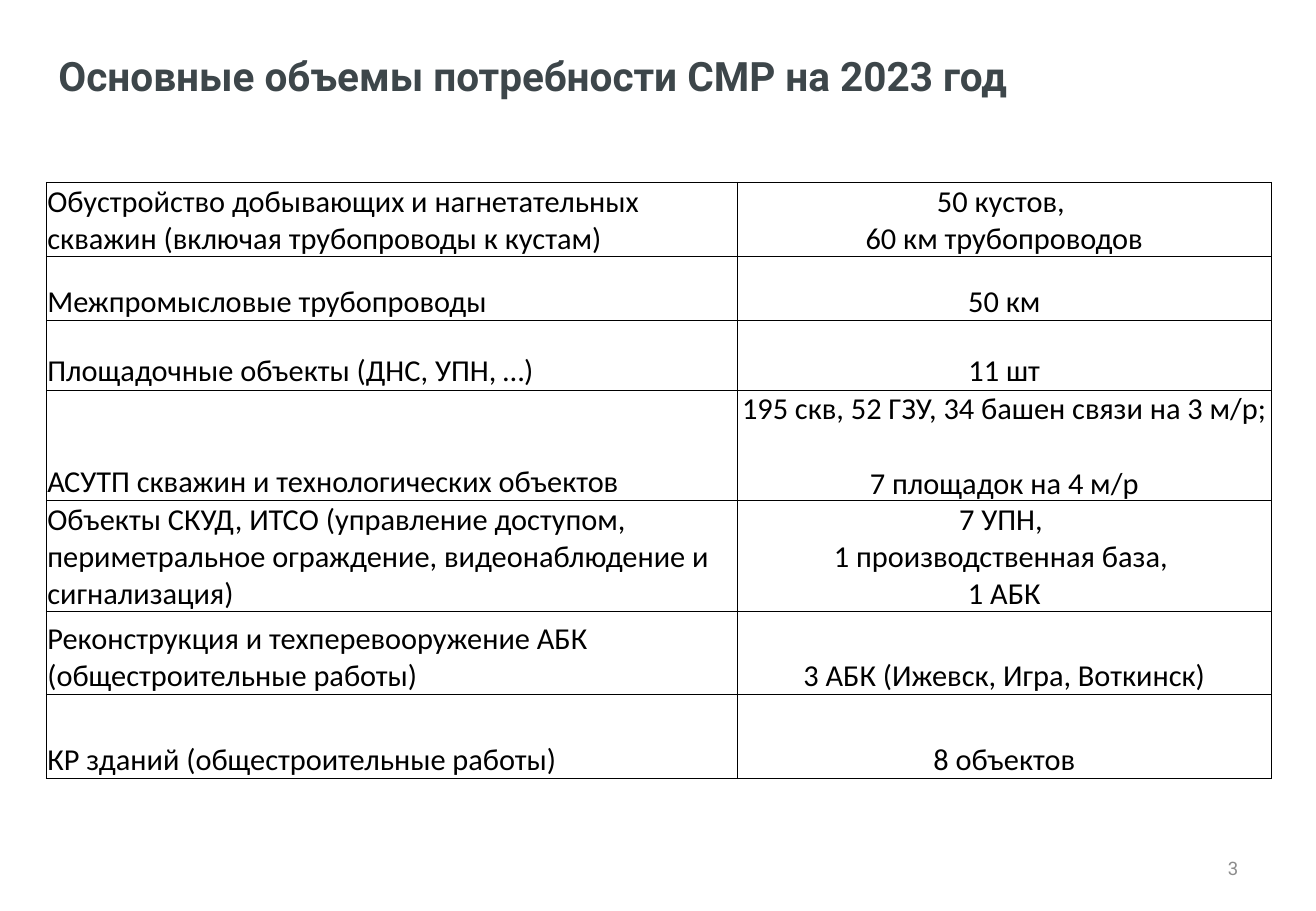
from dataclasses import dataclass

from lxml.etree import SubElement
from pptx import Presentation
from pptx.dml.color import RGBColor
from pptx.enum.text import MSO_ANCHOR, PP_ALIGN
from pptx.oxml.ns import qn
from pptx.util import Inches, Pt

TITLE = "Основные объемы потребности СМР на 2023 год"
PAGE_NUMBER = "3"

# (height in inches, work, volume)
ROWS = [
    (0.51, "Обустройство добывающих и нагнетательных скважин (включая трубопроводы к кустам)",
     "50 кустов, \n60 км трубопроводов"),
    (0.53, "Межпромысловые трубопроводы", "50 км"),
    (0.57, "Площадочные объекты (ДНС, УПН, …)", "11 шт"),
    (0.76, "АСУТП скважин и технологических объектов",
     "195 скв, 52 ГЗУ, 34 башен связи на 3 м/р; \n7 площадок на 4 м/р"),
    (0.76, "Объекты СКУД, ИТСО (управление доступом, периметральное ограждение, "
           "видеонаблюдение и сигнализация)",
     "7 УПН, \n1 производственная база, \n1 АБК"),
    (0.69, "Реконструкция и техперевооружение АБК (общестроительные работы)",
     "3 АБК (Ижевск, Игра, Воткинск)"),
    (0.69, "КР зданий (общестроительные работы)", "8 объектов"),
]
COLUMN_WIDTHS = (5.69, 4.39)
COLUMN_ALIGNMENTS = (PP_ALIGN.LEFT, PP_ALIGN.CENTER)


@dataclass(frozen=True)
class Theme:
    heading_font: str = "Roboto"
    table_font: str = "Calibri"
    heading: str = "3D464A"
    ink: str = "000000"
    muted: str = "8C8C8C"
    title_size: int = 24
    table_size: int = 18
    number_size: int = 11
    border_width: float = 0.5


THEME = Theme()


def write(frame, text, font, size, color, alignment, anchor, bold=False):
    frame.word_wrap = True
    frame.vertical_anchor = anchor
    para = frame.paragraphs[0]
    para.text = text
    para.alignment = alignment
    para.font.name = font
    para.font.size = Pt(size)
    para.font.bold = bold
    para.font.color.rgb = RGBColor.from_string(color)


def add_borders(cell):
    properties = cell._tc.get_or_add_tcPr()
    for side in ("a:lnL", "a:lnR", "a:lnT", "a:lnB"):
        line = SubElement(properties, qn(side), w=str(Pt(THEME.border_width)))
        fill = SubElement(line, qn("a:solidFill"))
        SubElement(fill, qn("a:srgbClr"), val=THEME.ink)


def add_title(page):
    title = page.shapes.title
    title.left, title.top = Inches(0.38), Inches(0.19)
    title.width, title.height = Inches(9.61), Inches(0.86)
    write(title.text_frame, TITLE, THEME.heading_font, THEME.title_size,
          THEME.heading, PP_ALIGN.LEFT, MSO_ANCHOR.MIDDLE, bold=True)


def add_volume_table(page):
    height = sum(row[0] for row in ROWS)
    table = page.shapes.add_table(
        len(ROWS), len(COLUMN_WIDTHS), Inches(0.38), Inches(1.5),
        Inches(sum(COLUMN_WIDTHS)), Inches(height)).table
    table.first_row = table.horz_banding = False
    for column, width in zip(table.columns, COLUMN_WIDTHS):
        column.width = Inches(width)
    for row, (row_height, *texts) in zip(table.rows, ROWS):
        row.height = Inches(row_height)
        for cell, text, alignment in zip(row.cells, texts, COLUMN_ALIGNMENTS):
            cell.margin_left = cell.margin_right = cell.margin_top = Inches(0.01)
            cell.margin_bottom = 0
            cell.vertical_anchor = MSO_ANCHOR.BOTTOM
            add_borders(cell)
            cell.fill.background()
            write(cell.text_frame, text, THEME.table_font, THEME.table_size,
                  THEME.ink, alignment, MSO_ANCHOR.BOTTOM)


def add_page_number(page):
    box = page.shapes.add_textbox(Inches(7.76), Inches(6.95), Inches(2.53), Inches(0.4))
    write(box.text_frame, PAGE_NUMBER, THEME.heading_font, THEME.number_size,
          THEME.muted, PP_ALIGN.RIGHT, MSO_ANCHOR.MIDDLE)


def main():
    deck = Presentation()
    deck.slide_width, deck.slide_height = Inches(10.83), Inches(7.5)
    page = deck.slides.add_slide(deck.slide_layouts.get_by_name("Title Only"))
    add_page_number(page)
    add_title(page)
    add_volume_table(page)
    deck.save("out.pptx")


if __name__ == "__main__":
    main()
